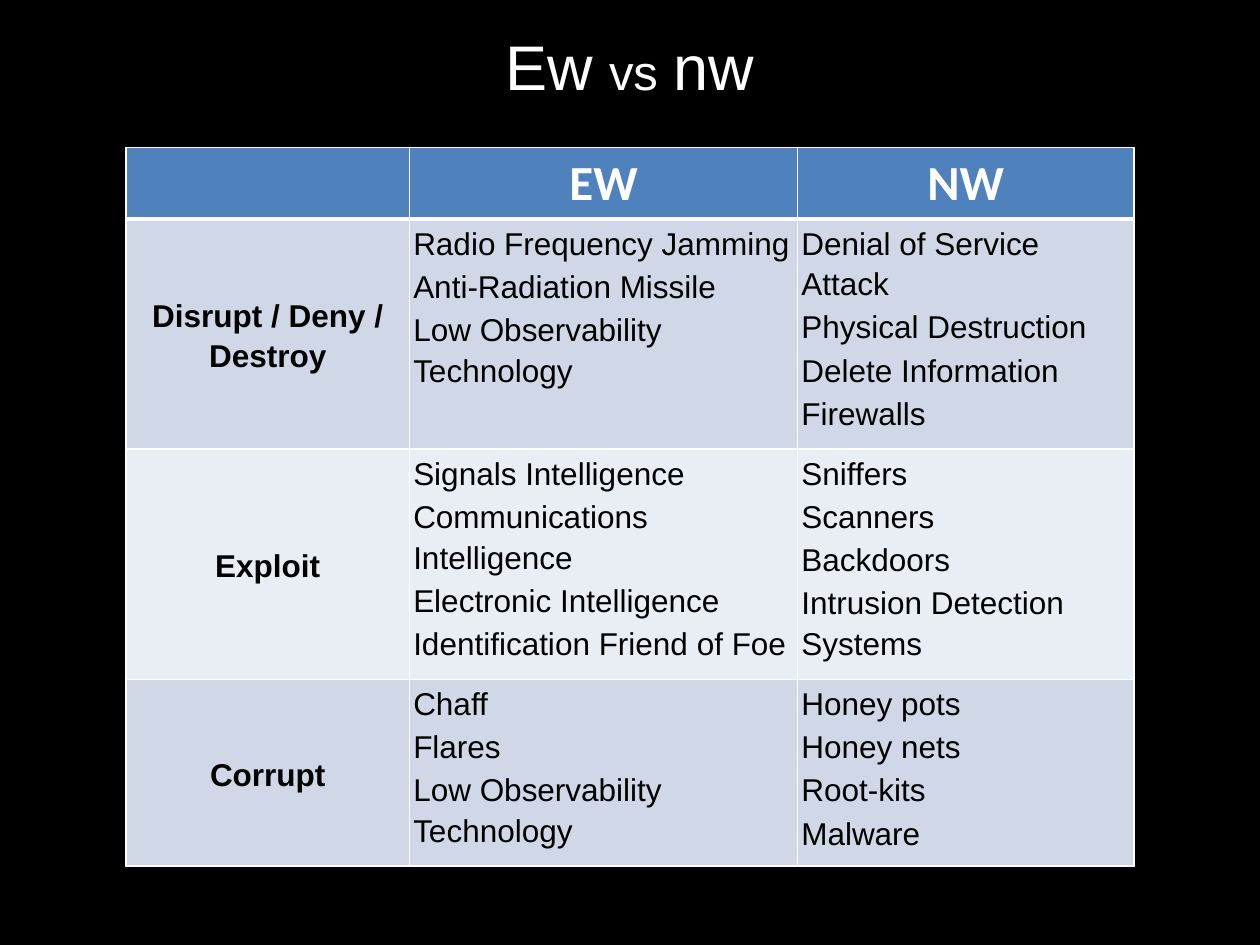
"""Build a slide with a table that compares EW and NW."""
import pptx
import pptx.dml.color
import pptx.enum.text
import pptx.oxml
import pptx.oxml.ns
import pptx.util

Inches, Pt = pptx.util.Inches, pptx.util.Pt
RGB = pptx.dml.color.RGBColor.from_string
ALIGN, ANCHOR = pptx.enum.text.PP_ALIGN, pptx.enum.text.MSO_ANCHOR

THEME = {
    "back": "000000", "light": "FFFFFF", "dark": "000000",
    "header": "4F81BD", "bands": ("D0D8E8", "E9EDF4"),
    "font": "Arial", "header_font": "Calibri",
    "header_size": 28, "body_size": 18, "rule": 1, "header_rule": 3,
}
TITLE = [("Ew", 36), (" ", 32), ("vs", 28), (" ", 32), ("nw", 36)]
HEADER = ["", "EW", "NW"]
ROWS = [
    ("Disrupt / Deny / Destroy",
     ["Radio Frequency Jamming", "Anti-Radiation Missile", "Low Observability Technology"],
     ["Denial of Service Attack", "Physical Destruction", "Delete Information", "Firewalls"]),
    ("Exploit",
     ["Signals Intelligence", "Communications Intelligence", "Electronic Intelligence",
      "Identification Friend of Foe"],
     ["Sniffers", "Scanners", "Backdoors", "Intrusion Detection Systems"]),
    ("Corrupt",
     ["Chaff", "Flares", "Low Observability Technology"],
     ["Honey pots", "Honey nets", "Root-kits", "Malware"]),
]
COLUMN_WIDTHS = [2.25, 3.08, 2.67]
ROW_HEIGHTS = [0.56, 1.82, 1.82, 1.48]


def style(p, font, size, color, bold, align):
    p.font.name, p.font.size, p.font.bold = font, Pt(size), bold
    p.font.color.rgb = RGB(color)
    p.alignment = align


def set_borders(cell, top, bottom):
    tcPr = cell._tc.get_or_add_tcPr()
    widths = {"L": THEME["rule"], "R": THEME["rule"], "T": top, "B": bottom}
    for side, width in widths.items():
        tcPr.append(pptx.oxml.parse_xml(
            f'<a:ln{side} {pptx.oxml.ns.nsdecls("a")} w="{Pt(width)}"><a:solidFill>'
            f'<a:srgbClr val="{THEME["light"]}"/></a:solidFill></a:ln{side}>'))


def fill_cell(cell, color):
    cell.fill.solid()
    cell.fill.fore_color.rgb = RGB(color)


def add_title(slide):
    sp = slide.shapes.title
    sp.left, sp.top, sp.width, sp.height = 0, Inches(0.17), Inches(10), Inches(0.71)
    tf = sp.text_frame
    tf.auto_size = pptx.enum.text.MSO_AUTO_SIZE.SHAPE_TO_FIT_TEXT
    tf.vertical_anchor = ANCHOR.TOP
    p = tf.paragraphs[0]
    style(p, THEME["font"], TITLE[0][1], THEME["light"], False, ALIGN.CENTER)
    for text, size in TITLE:
        r = p.add_run()
        r.text, r.font.size = text, Pt(size)


def write_header(cell, text):
    cell.text = text
    style(cell.text_frame.paragraphs[0], THEME["header_font"], THEME["header_size"],
          THEME["light"], True, ALIGN.CENTER)
    set_borders(cell, THEME["rule"], THEME["header_rule"])
    fill_cell(cell, THEME["header"])


def write_body(cell, content, row):
    label = isinstance(content, str)
    cell.text = content if label else "\n".join(content)
    cell.margin_left = cell.margin_right = Inches(0.03)
    cell.margin_top = cell.margin_bottom = Inches(0.02)
    cell.vertical_anchor = ANCHOR.MIDDLE if label else ANCHOR.TOP
    for p in cell.text_frame.paragraphs:
        style(p, THEME["font"], THEME["body_size"], THEME["dark"], label,
              ALIGN.CENTER if label else ALIGN.LEFT)
        p.line_spacing = 1.15
        p.space_after = Pt(0 if label else 1.5)
    set_borders(cell, THEME["rule"] if row else THEME["header_rule"], THEME["rule"])
    fill_cell(cell, THEME["bands"][row % 2])


def add_comparison(slide):
    table = slide.shapes.add_table(
        len(ROW_HEIGHTS), len(COLUMN_WIDTHS), Inches(1), Inches(1.17),
        Inches(sum(COLUMN_WIDTHS)), Inches(sum(ROW_HEIGHTS))).table
    for column, width in zip(table.columns, COLUMN_WIDTHS):
        column.width = Inches(width)
    for row, height in zip(table.rows, ROW_HEIGHTS):
        row.height = Inches(height)
    for j, text in enumerate(HEADER):
        write_header(table.cell(0, j), text)
    for i, contents in enumerate(ROWS):
        for j, content in enumerate(contents):
            write_body(table.cell(i + 1, j), content, i)


def main():
    prs = pptx.Presentation()
    prs.slide_width, prs.slide_height = Inches(10), Inches(7.5)
    slide = prs.slides.add_slide(prs.slide_layouts.get_by_name("Title Only"))
    slide.background.fill.solid()
    slide.background.fill.fore_color.rgb = RGB(THEME["back"])
    add_title(slide)
    add_comparison(slide)
    prs.save("out.pptx")


if __name__ == "__main__":
    main()
